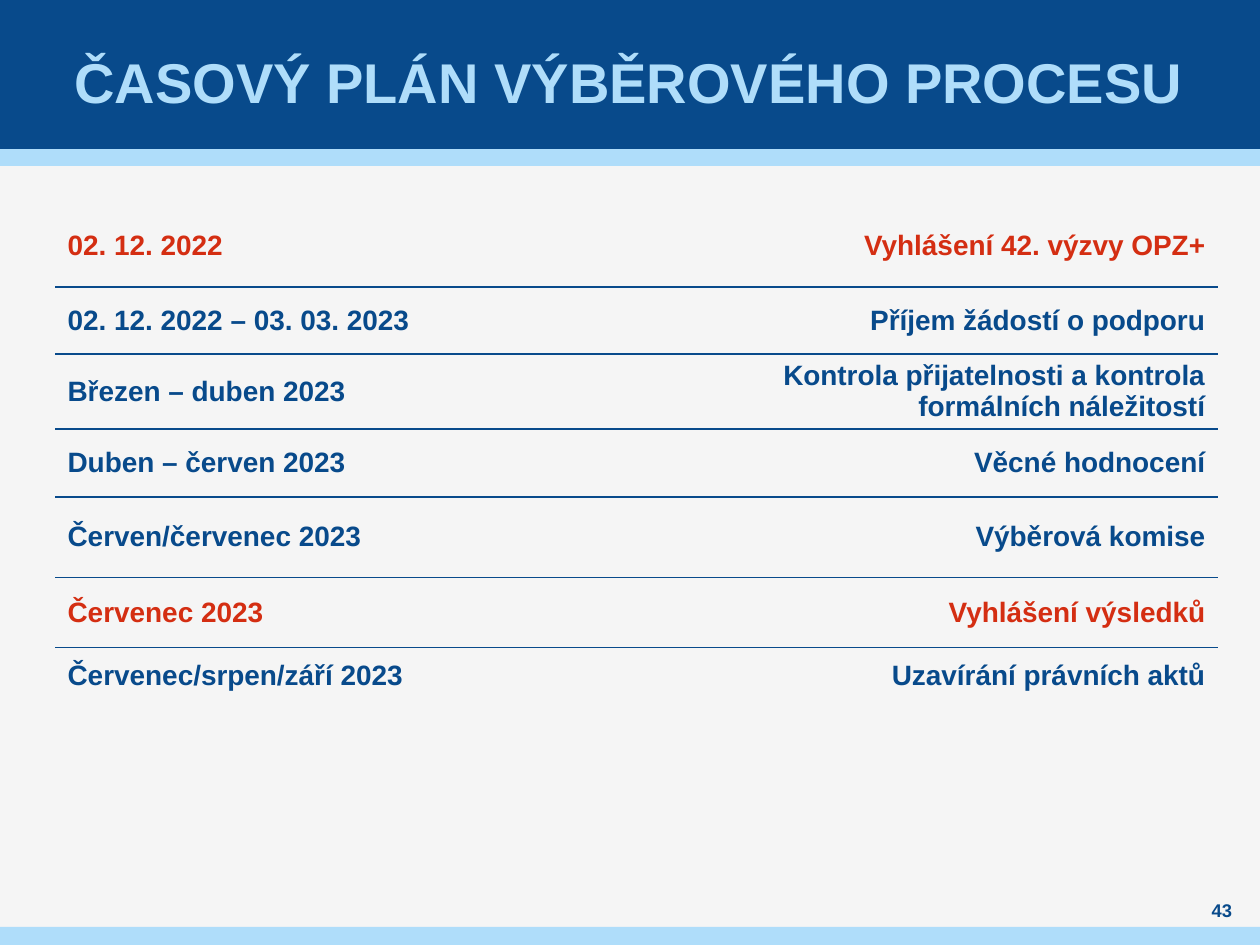
import pptx
import pptx.util
import pptx.dml.color
import pptx.enum.text
import pptx.enum.shapes
import pptx.oxml

NAVY, SKY, RED, PALE = "084A8B", "AFDDFA", "D42E12", "F5F5F5"
PX = 914400 // 126
ALIGN = pptx.enum.text.PP_ALIGN
MIDDLE = pptx.enum.text.MSO_ANCHOR.MIDDLE


def rgb(code):
    return pptx.dml.color.RGBColor.from_string(code)


def write(frame, text, size=16, color=NAVY, align=ALIGN.LEFT):
    par = frame.paragraphs[0]
    par.alignment = align
    run = par.add_run()
    run.text = text
    font = run.font
    font.name, font.size, font.bold = "Arial", pptx.util.Pt(size), True
    font.color.rgb = rgb(color)


deck = pptx.Presentation()
deck.slide_width, deck.slide_height = 1260 * PX, 945 * PX
slide = deck.slides.add_slide(deck.slide_layouts[5])
slide.background.fill.solid()
slide.background.fill.fore_color.rgb = rgb(PALE)

# Header and footer bands
for top, high, color in [(149, 17, SKY), (0, 149, NAVY), (927, 18, SKY)]:
    band = slide.shapes.add_shape(
        pptx.enum.shapes.MSO_SHAPE.RECTANGLE, 0, top * PX, 1260 * PX, high * PX)
    band.shadow.inherit = False
    band.fill.solid()
    band.fill.fore_color.rgb = rgb(color)
    band.line.fill.background()

# Title, raised above the bands
title = slide.shapes.title
title.left, title.top, title.width, title.height = 49 * PX, -14 * PX, 1160 * PX, 149 * PX
title.element.getparent().append(title.element)
frame = title.text_frame
frame.word_wrap = True
frame.vertical_anchor = MIDDLE
frame.margin_left = frame.margin_right = 5 * PX
frame.margin_top, frame.margin_bottom = 42 * PX, 0
write(frame, "ČASOVÝ PLÁN VÝBĚROVÉHO PROCESU", size=32, color=SKY, align=ALIGN.CENTER)

# Schedule: row height, date, step, colour
plan = [
    (83, "02. 12. 2022", "Vyhlášení 42. výzvy OPZ+", RED),
    (67, "02. 12. 2022 – 03. 03. 2023", "Příjem žádostí o podporu", NAVY),
    (71, "Březen – duben 2023", "Kontrola přijatelnosti a kontrola formálních náležitostí", NAVY),
    (68, "Duben – červen 2023", "Věcné hodnocení", NAVY),
    (81, "Červen/červenec 2023", "Výběrová komise", NAVY),
    (70, "Červenec 2023", "Vyhlášení výsledků", RED),
    (57, "Červenec/srpen/září 2023", "Uzavírání právních aktů", NAVY),
]
high = sum(row[0] for row in plan)
table = slide.shapes.add_table(
    len(plan), 2, 55 * PX, 204 * PX, 1163 * PX, high * PX).table
table.first_row = table.horz_banding = False
# Built-in style "No Style, No Grid"
table._tbl.tblPr[0].text = "{2D5ABB26-0587-4C30-8999-92F81FD0307C}"
for col, wide in zip(table.columns, (570, 593)):
    col.width = wide * PX

RULE = (
    '<a:lnB xmlns:a="http://schemas.openxmlformats.org/drawingml/2006/main" w="12700">'
    f'<a:solidFill><a:srgbClr val="{NAVY}"/></a:solidFill></a:lnB>')
for i, (high, date, step, color) in enumerate(plan):
    table.rows[i].height = high * PX
    for j, (text, align) in enumerate([(date, ALIGN.LEFT), (step, ALIGN.RIGHT)]):
        cell = table.cell(i, j)
        cell.vertical_anchor = MIDDLE
        cell.fill.background()
        write(cell.text_frame, text, color=color, align=align)
        if i < len(plan) - 1:
            cell._tc.get_or_add_tcPr().insert(0, pptx.oxml.parse_xml(RULE))

# Page number
box = slide.shapes.add_textbox(1190 * PX, 898 * PX, 64 * PX, 25 * PX)
frame = box.text_frame
frame.word_wrap = True
frame.vertical_anchor = MIDDLE
frame.margin_left = frame.margin_right = frame.margin_top = frame.margin_bottom = 0
write(frame, "43", size=10.5, align=ALIGN.CENTER)

deck.save("out.pptx")
